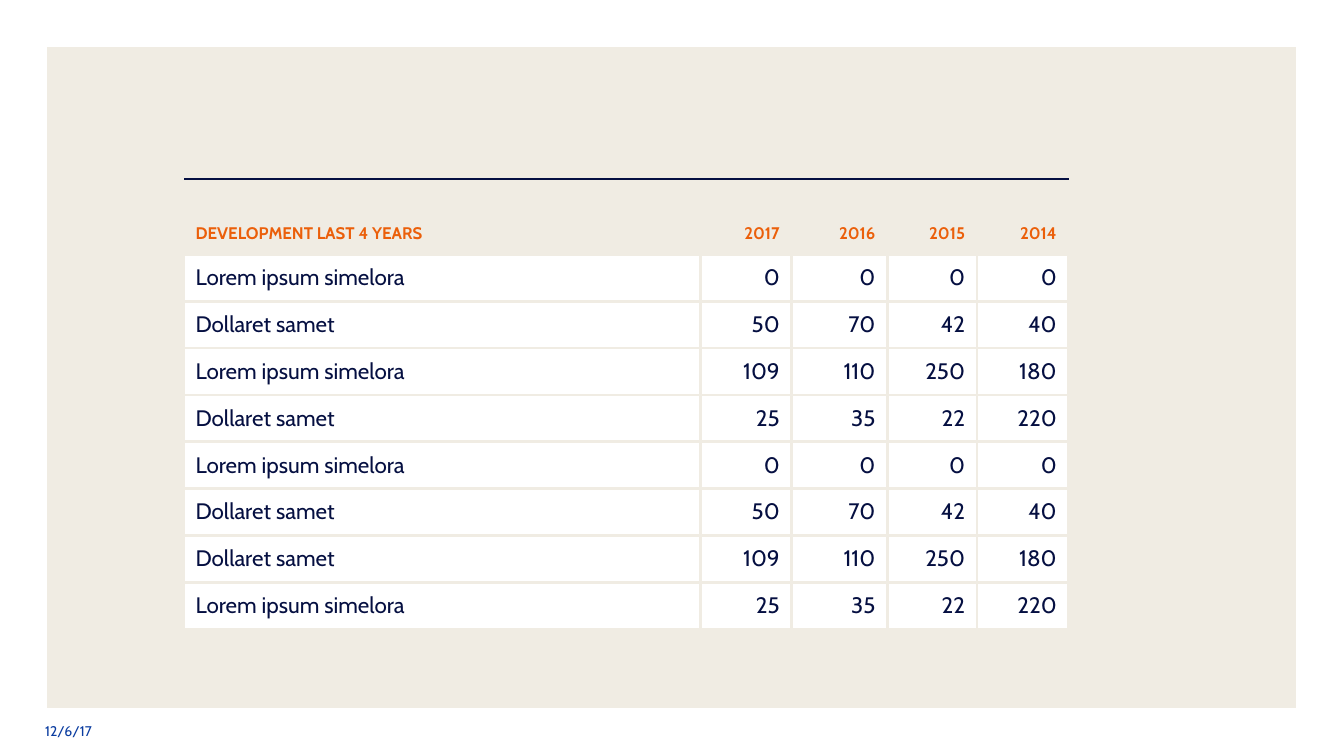
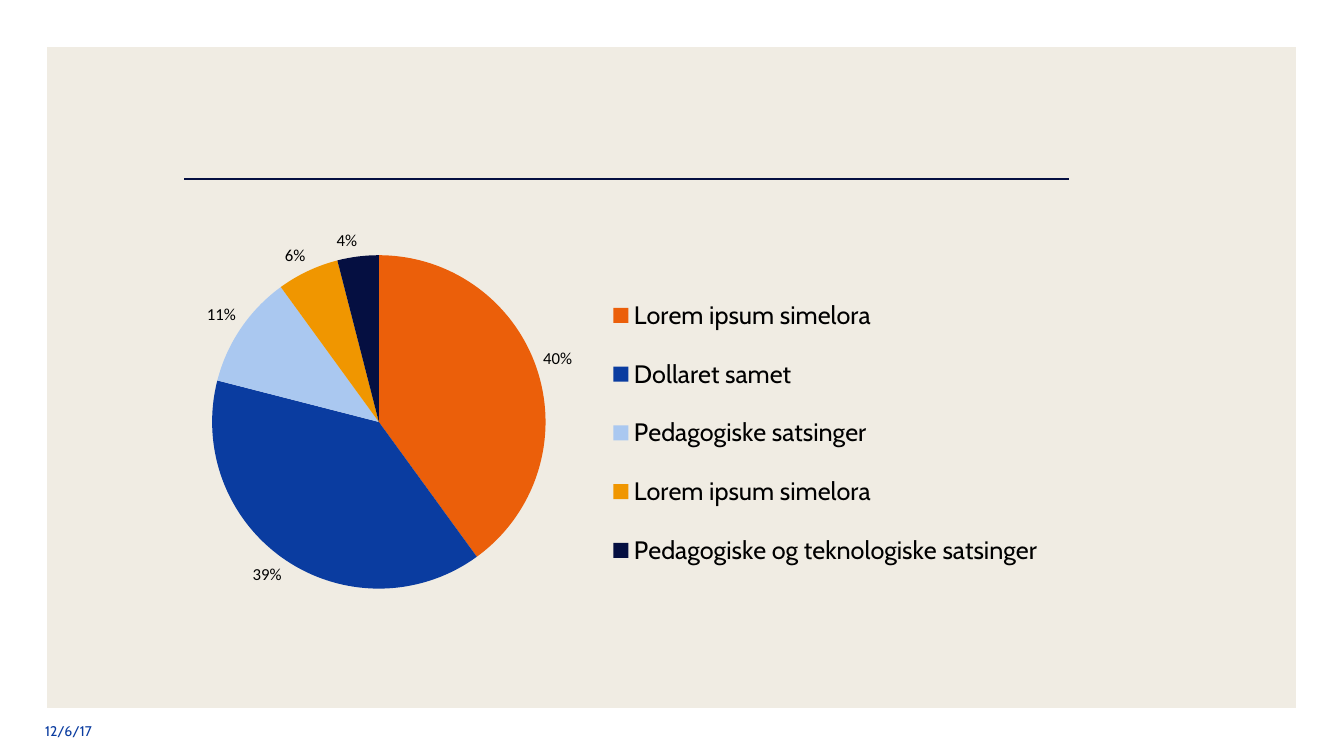
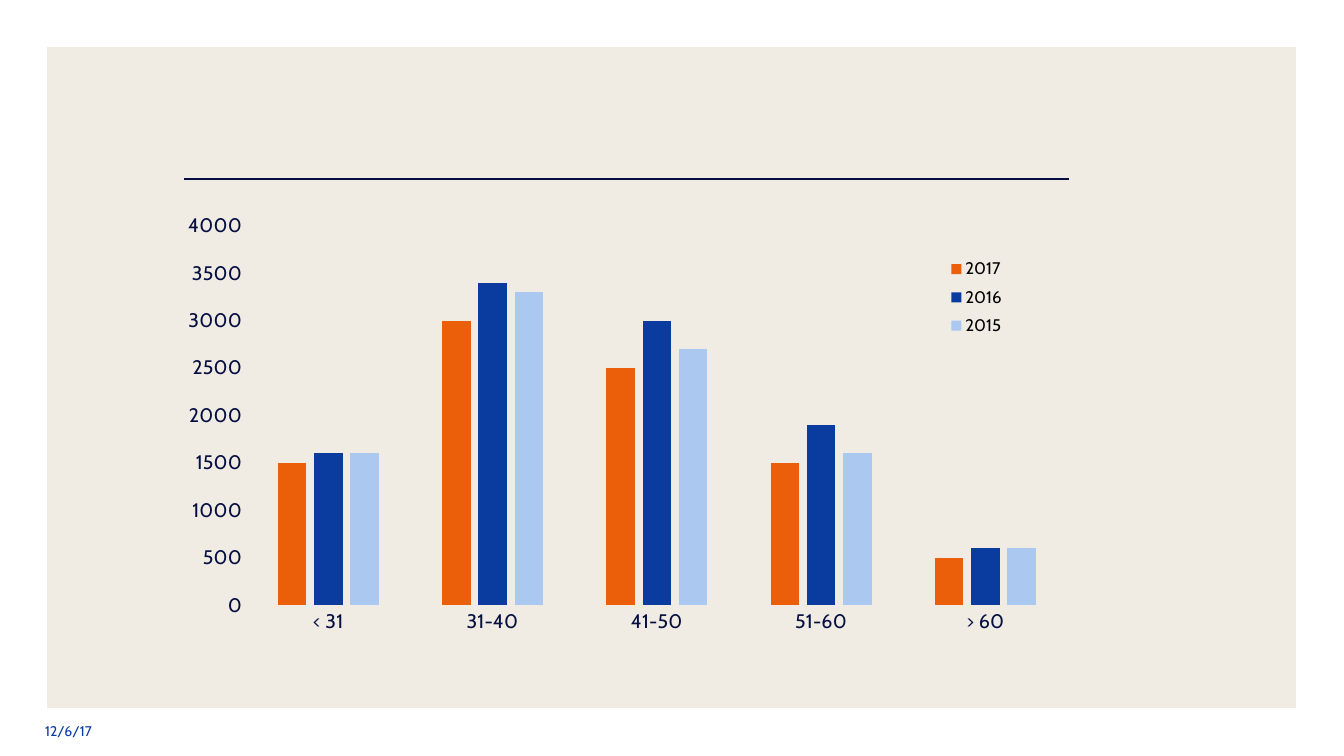
from lxml import etree
from pptx import Presentation
from pptx.chart.data import CategoryChartData
from pptx.dml.color import RGBColor
from pptx.enum import chart as ch, shapes, text
from pptx.oxml.ns import qn
from pptx.util import Cm, Pt

COLORS = {
    "sand": "F0ECE3", "white": "FFFFFF", "navy": "050F41", "orange": "EB5F0A",
    "blue": "0A3CA0", "sky": "AAC8F0", "amber": "F09600", "black": "000000",
}
FONT = "Cabin"
SLIDE_W, SLIDE_H = 33.87, 19.05
FRAME_AT = (0.58, 0.58, 32.69, 17.86)
LEFT, WIDTH = 4.63, 22.3
RULE_Y, TABLE_Y, CHART_Y, CHART_H = 4.52, 5.37, 5.39, 10.97
DATE = "12/6/17"

TABLE_HEAD = ("DEVELOPMENT LAST 4 YEARS", "2017", "2016", "2015", "2014")
TABLE_ROWS = [
    ("Lorem ipsum simelora", 0, 0, 0, 0),
    ("Dollaret samet", 50, 70, 42, 40),
    ("Lorem ipsum simelora", 109, 110, 250, 180),
    ("Dollaret samet", 25, 35, 22, 220),
    ("Lorem ipsum simelora", 0, 0, 0, 0),
    ("Dollaret samet", 50, 70, 42, 40),
    ("Dollaret samet", 109, 110, 250, 180),
    ("Lorem ipsum simelora", 25, 35, 22, 220),
]
COLUMN_WIDTHS = (13.03, 2.29, 2.41, 2.26, 2.31)
HEAD_H, ROW_H = 1.04, 1.18

SHARES = [
    ("Lorem ipsum simelora", 0.4, "orange"),
    ("Dollaret samet", 0.39, "blue"),
    ("Pedagogiske satsinger", 0.11, "sky"),
    ("Lorem ipsum simelora", 0.06, "amber"),
    ("Pedagogiske og teknologiske satsinger", 0.04, "navy"),
]

AGE_GROUPS = ("< 31", "31-40", "41-50", "51-60", "> 60")
AGE_SERIES = [
    ("2017", (1500, 3000, 2500, 1500, 500), "orange"),
    ("2016", (1600, 3400, 3000, 1900, 600), "blue"),
    ("2015", (1600, 3300, 2700, 1600, 600), "sky"),
]


def rgb(name):
    return RGBColor.from_string(COLORS[name])


def paint(part, color):
    part.fill.solid()
    part.fill.fore_color.rgb = rgb(color)


def draw_line(line, color, width):
    line.color.rgb = rgb(color)
    line.width = Pt(width)


def style(font, size, color, name=FONT, bold=False):
    font.size, font.name, font.bold = Pt(size), name, bold
    font.color.rgb = rgb(color)


def add_page(deck):
    """Add a blank slide with the background, white frame, rule and date."""
    page = deck.slides.add_slide(deck.slide_layouts[6])
    paint(page.background, "sand")
    frame = page.shapes.add_shape(
        shapes.MSO_SHAPE.RECTANGLE, *(Cm(length) for length in FRAME_AT))
    frame.shadow.inherit = False
    frame.fill.background()
    draw_line(frame.line, "white", 34)
    outline = frame._element.spPr.find(qn("a:ln"))
    etree.SubElement(outline, qn("a:miter"), lim="800000")
    rule = page.shapes.add_connector(
        shapes.MSO_CONNECTOR.STRAIGHT, Cm(LEFT + WIDTH), Cm(RULE_Y), Cm(LEFT), Cm(RULE_Y))
    draw_line(rule.line, "navy", 1.5)
    etree.SubElement(rule._element.spPr, qn("a:effectLst"))
    add_date(page)
    return page


def add_date(page):
    box = page.shapes.add_textbox(Cm(1.14), Cm(18.21), Cm(7.62), Cm(0.84))
    frame = box.text_frame
    frame.word_wrap = True
    frame.margin_left = frame.margin_right = frame.margin_top = frame.margin_bottom = 0
    span = frame.paragraphs[0].add_run()
    span.text = DATE
    style(span.font, 10, "blue")


def border(cell, color, width):
    props = cell._tc.get_or_add_tcPr()
    for index, side in enumerate(("lnL", "lnR", "lnT", "lnB")):
        line = etree.Element(qn(f"a:{side}"), w=str(Pt(width)))
        fill = etree.SubElement(line, qn("a:solidFill"))
        etree.SubElement(fill, qn("a:srgbClr"), val=COLORS[color])
        props.insert(index, line)


def fill_cell(cell, value, is_head, is_number):
    cell.vertical_anchor = text.MSO_ANCHOR.MIDDLE
    cell.margin_left = cell.margin_right = Cm(0.3)
    cell.margin_top = cell.margin_bottom = Cm(0.25)
    if is_head:
        cell.fill.background()
    else:
        paint(cell, "white")
    border(cell, "sand", 2.25)
    para = cell.text_frame.paragraphs[0]
    para.alignment = text.PP_ALIGN.RIGHT if is_number else text.PP_ALIGN.LEFT
    span = para.add_run()
    span.text = str(value)
    if is_head:
        style(span.font, 12, "orange", bold=True)
    else:
        style(span.font, 16, "navy")


def add_figures(page):
    rows = [TABLE_HEAD] + TABLE_ROWS
    heights = [HEAD_H] + [ROW_H] * len(TABLE_ROWS)
    table = page.shapes.add_table(
        len(rows), len(TABLE_HEAD), Cm(LEFT), Cm(TABLE_Y), Cm(WIDTH), Cm(sum(heights))).table
    table.horz_banding = table.first_row = False
    for column, width in zip(table.columns, COLUMN_WIDTHS):
        column.width = Cm(width)
    for r, (values, height) in enumerate(zip(rows, heights)):
        table.rows[r].height = Cm(height)
        for c, value in enumerate(values):
            fill_cell(table.cell(r, c), value, r == 0, c > 0)


def make_layout(bounds, inner=False):
    """Return a manual chart layout for x, y, width, height as fractions."""
    layout = etree.Element(qn("c:layout"))
    manual = etree.SubElement(layout, qn("c:manualLayout"))
    if inner:
        etree.SubElement(manual, qn("c:layoutTarget"), val="inner")
    for tag in ("xMode", "yMode"):
        etree.SubElement(manual, qn(f"c:{tag}"), val="edge")
    for tag, value in zip("xywh", bounds):
        etree.SubElement(manual, qn(f"c:{tag}"), val=str(value))
    return layout


def add_graph(page, kind, data, left, plot_at, legend_at, legend_pos, legend_size):
    """Add a transparent chart with its plot and legend placed by fractions."""
    chart = page.shapes.add_chart(
        kind, Cm(left), Cm(CHART_Y), Cm(LEFT + WIDTH - left), Cm(CHART_H), data).chart
    chart.has_title = False
    style(chart.font, 10, "navy", "Calibri")
    chart.has_legend = True
    legend = chart.legend
    legend.position = legend_pos
    legend.include_in_layout = False
    style(legend.font, legend_size, "black")

    space = chart._chartSpace
    plot_area = space.find(".//" + qn("c:plotArea"))
    for parent in (plot_area, legend._element):
        for old in parent.findall(qn("c:layout")):
            parent.remove(old)
    plot_area.insert(0, make_layout(plot_at, inner=True))
    legend._element.find(qn("c:legendPos")).addnext(make_layout(legend_at))

    look = etree.Element(qn("c:spPr"))
    etree.SubElement(look, qn("a:noFill"))
    etree.SubElement(etree.SubElement(look, qn("a:ln")), qn("a:noFill"))
    space.find(qn("c:chart")).addnext(look)
    return chart


def add_shares(page):
    data = CategoryChartData(number_format="0%")
    data.categories = [name for name, _, _ in SHARES]
    data.add_series("Series 1", [share for _, share, _ in SHARES])
    chart = add_graph(
        page, ch.XL_CHART_TYPE.PIE, data, LEFT, (0.032, 0.095, 0.377, 0.766),
        (0.475, 0.133, 0.5, 0.74), ch.XL_LEGEND_POSITION.RIGHT, 18)
    plot = chart.plots[0]
    plot.vary_by_categories = True
    for index, (_, _, color) in enumerate(SHARES):
        paint(plot.series[0].points[index].format, color)
    labels = plot.series[0].data_labels
    labels.show_value = True
    labels.number_format, labels.number_format_is_linked = "0%", False
    labels.position = ch.XL_LABEL_POSITION.OUTSIDE_END
    style(labels.font, 12, "black", "Calibri")


def add_ages(page):
    data = CategoryChartData()
    data.categories = AGE_GROUPS
    for name, values, _ in AGE_SERIES:
        data.add_series(name, values)
    chart = add_graph(
        page, ch.XL_CHART_TYPE.COLUMN_CLUSTERED, data, LEFT - 0.23,
        (0.08, 0.027, 0.919, 0.872), (0.857, 0.084, 0.08, 0.214),
        ch.XL_LEGEND_POSITION.CORNER, 12)
    plot = chart.plots[0]
    plot.vary_by_categories = False
    plot.gap_width, plot.overlap = 221, -27
    for series, (_, _, color) in zip(plot.series, AGE_SERIES):
        paint(series.format, color)
    for axis in (chart.category_axis, chart.value_axis):
        axis.major_tick_mark = axis.minor_tick_mark = ch.XL_TICK_MARK.NONE
        style(axis.tick_labels.font, 14, "navy")
        draw_line(axis.format.line, "sand", 0.75)
    scale = chart.value_axis
    scale.minimum_scale, scale.maximum_scale, scale.major_unit = 0, 4000, 500
    scale.has_major_gridlines = True
    draw_line(scale.major_gridlines.format.line, "sand", 0.75)


def main():
    deck = Presentation()
    deck.slide_width, deck.slide_height = Cm(SLIDE_W), Cm(SLIDE_H)
    for add_content in (add_figures, add_shares, add_ages):
        add_content(add_page(deck))
    deck.save("out.pptx")


if __name__ == "__main__":
    main()
